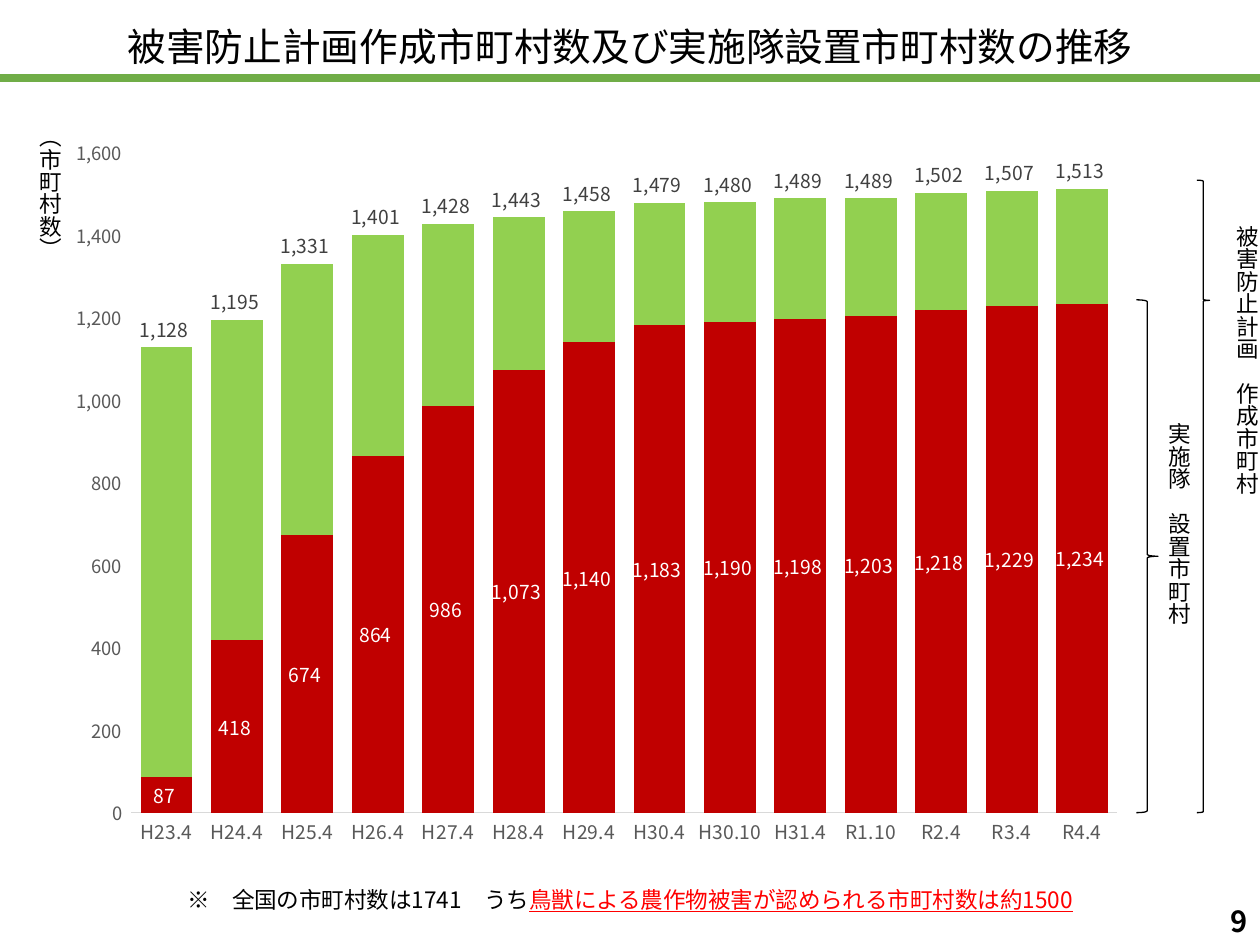
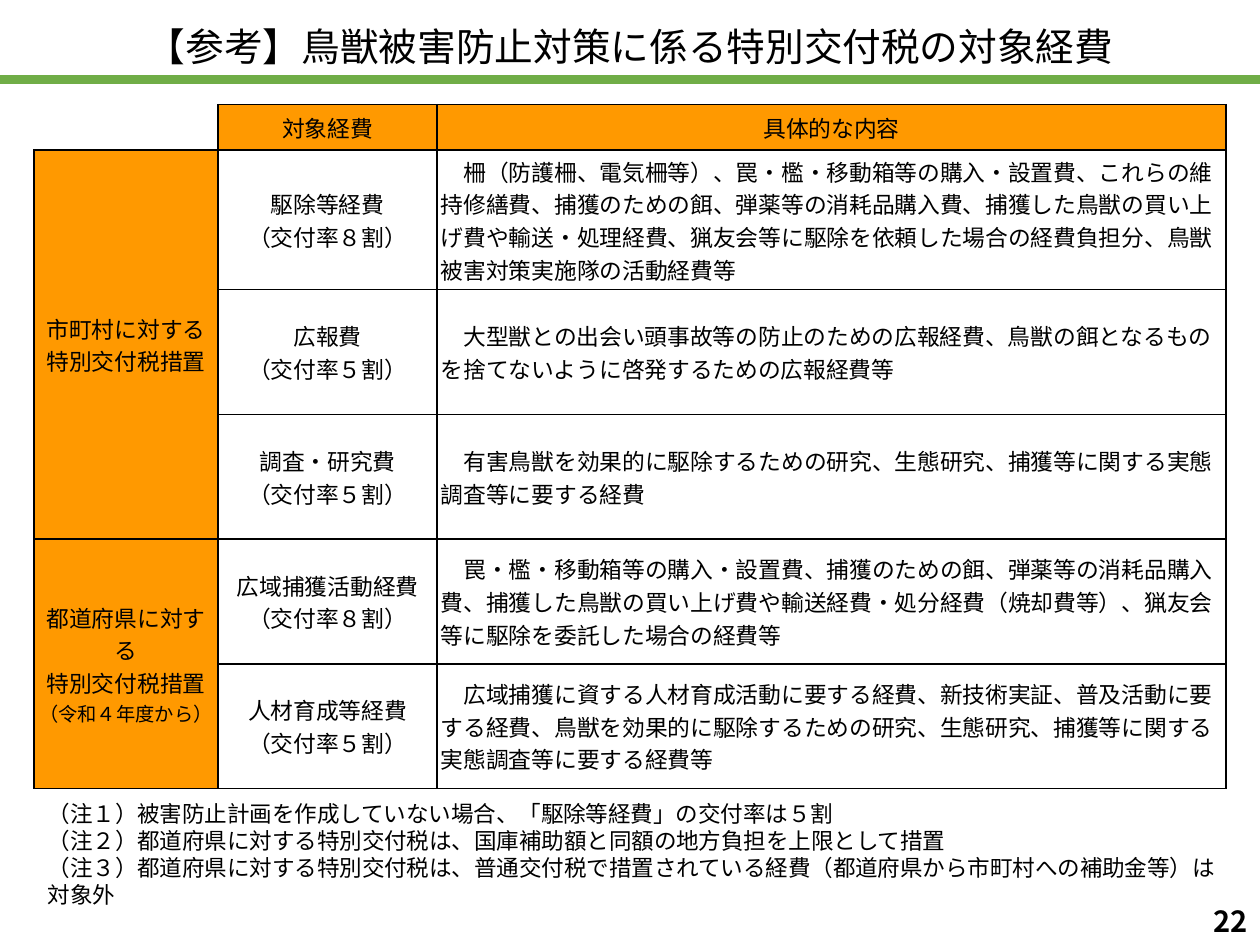
import pptx
import pptx.util
import pptx.dml.color
import pptx.enum.text
import pptx.enum.shapes
import pptx.enum.chart
import pptx.chart.data
import pptx.oxml
import pptx.oxml.ns
from lxml import etree

Inches = pptx.util.Inches
Pt = pptx.util.Pt
RGB = pptx.dml.color.RGBColor.from_string
Align = pptx.enum.text.PP_ALIGN
Anchor = pptx.enum.text.MSO_ANCHOR
Shape = pptx.enum.shapes
Chart = pptx.enum.chart
qn = pptx.oxml.ns.qn


class Theme:
    font = "Noto Sans CJK JP"
    black, white, red = "000000", "FFFFFF", "FF0000"
    band, orange = "70AD47", "FF9900"
    lime, crimson = "92D050", "C00000"
    tick, label, rule = "595959", "404040", "D9D9D9"
    title, page, note, cell, small = 22.1, 16.6, 12.9, 13, 11
    axis, mark = 10.5, 11


def write(frame, text, size, align=None, bold=None):
    frame.text = text
    for para in frame.paragraphs:
        para.alignment = align
        for run in para.runs:
            run.font.size = Pt(size)
            run.font.bold = bold
            run.font.name = Theme.font
            run.font.color.rgb = RGB(Theme.black)
            east = etree.SubElement(run.font._element, qn("a:ea"))
            east.set("typeface", Theme.font)


def place(slide, box, text, size, align=None, bold=None):
    frame = slide.shapes.add_textbox(*map(Inches, box)).text_frame
    frame.word_wrap = True
    write(frame, text, size, align, bold)
    return frame


deck = pptx.Presentation()
deck.slide_width, deck.slide_height = Inches(10), Inches(7.5)

heads = [
    ("被害防止計画作成市町村数及び実施隊設置市町村数の推移", "9", 0.62),
    ("【参考】鳥獣被害防止対策に係る特別交付税の対象経費", "22", 0.63),
]
slides = []
for title, page, level in heads:
    slide = deck.slides.add_slide(deck.slide_layouts[6])
    place(slide, (0, 0.13, 10, 0.47), title, Theme.title, Align.CENTER)
    band = slide.shapes.add_connector(
        Shape.MSO_CONNECTOR.STRAIGHT, 0, Inches(level), Inches(10), Inches(level))
    band.line.color.rgb = RGB(Theme.band)
    band.line.width = Pt(5)
    etree.SubElement(band._element.spPr, qn("a:effectLst"))
    frame = place(slide, (9.41, 7.11, 0.59, 0.39), page, Theme.page, Align.RIGHT, True)
    frame.word_wrap = False
    frame.vertical_anchor = Anchor.MIDDLE
    slides.append(slide)

trend, costs = slides

data = pptx.chart.data.CategoryChartData()
data.categories = ["H23.4", "H24.4", "H25.4", "H26.4", "H27.4", "H28.4", "H29.4",
                   "H30.4", "H30.10", "H31.4", "R1.10", "R2.4", "R3.4", "R4.4"]
data.add_series("被害防止計画作成市町村", [
    1128, 1195, 1331, 1401, 1428, 1443, 1458, 1479, 1480, 1489, 1489, 1502, 1507, 1513])
data.add_series("実施隊設置市町村", [
    87, 418, 674, 864, 986, 1073, 1140, 1183, 1190, 1198, 1203, 1218, 1229, 1234])
chart = trend.shapes.add_chart(
    Chart.XL_CHART_TYPE.COLUMN_CLUSTERED,
    Inches(0.44), Inches(0.98), Inches(8.6), Inches(5.82), data).chart
chart.has_legend = False
chart.has_title = False
chart.font.name = Theme.font
chart.font.size = Pt(Theme.axis)

plot = chart.plots[0]
plot.gap_width, plot.overlap = 36, 100
plot.vary_by_categories = False
area = chart._chartSpace.chart.plotArea
for old in area.findall(qn("c:layout")):
    area.remove(old)
layout = etree.Element(qn("c:layout"))
area.insert(0, layout)
manual = etree.SubElement(layout, qn("c:manualLayout"))
for tag, val in [("layoutTarget", "inner"), ("xMode", "edge"), ("yMode", "edge"),
                 ("x", "0.07"), ("y", "0.04"), ("w", "0.91"), ("h", "0.9")]:
    etree.SubElement(manual, qn("c:" + tag)).set("val", val)

digits = "#,##0_ ;[Red]\\-#,##0\\ "
spot = Chart.XL_LABEL_POSITION
looks = [(Theme.lime, Theme.label, spot.OUTSIDE_END),
         (Theme.crimson, Theme.white, spot.CENTER)]
for series, (fill, ink, where) in zip(plot.series, looks):
    series.format.fill.solid()
    series.format.fill.fore_color.rgb = RGB(fill)
    series.invert_if_negative = False
    marks = series.data_labels
    marks.show_value = True
    marks.position = where
    marks.number_format, marks.number_format_is_linked = digits, False
    marks.font.size = Pt(Theme.mark)
    marks.font.name = Theme.font
    marks.font.color.rgb = RGB(ink)

years, count = chart.category_axis, chart.value_axis
for axis, size in [(years, Theme.mark), (count, Theme.axis)]:
    axis.has_major_gridlines = False
    axis.major_tick_mark = axis.minor_tick_mark = Chart.XL_TICK_MARK.NONE
    axis.tick_labels.font.size = Pt(size)
    axis.tick_labels.font.name = Theme.font
    axis.tick_labels.font.color.rgb = RGB(Theme.tick)
years.format.line.color.rgb = RGB(Theme.rule)
years.format.line.width = Pt(0.75)
count.format.line.fill.background()
count.minimum_scale, count.maximum_scale, count.major_unit = 0, 1600, 200
count.tick_labels.number_format = digits
count.tick_labels.number_format_is_linked = False

for left, top, high, text in [
    (0.13, 0.9, 1.37, "（市町村数）"),
    (9.63, 1.69, 3.05, "被害防止計画　作成市町村"),
    (9.09, 3.26, 3.05, "実施隊　設置市町村"),
]:
    frame = place(trend, (left, top, 0.42, high), text, Theme.note)
    frame._txBody.bodyPr.set("vert", "eaVert")

for box, bend, tip in [((9.5, 1.43, 0.1, 5.02), 0.08, 0.19),
                       ((9.02, 2.38, 0.17, 4.07), 0.08, 0.5)]:
    brace = trend.shapes.add_shape(Shape.MSO_SHAPE.RIGHT_BRACE, *map(Inches, box))
    brace.adjustments[0], brace.adjustments[1] = bend, tip
    brace.fill.background()
    brace.line.color.rgb = RGB(Theme.black)
    brace.line.width = Pt(0.75)
    brace.shadow.inherit = False

frame = place(trend, (0, 6.98, 10, 0.32), "※　全国の市町村数は1741　うち", Theme.note, Align.CENTER)
stress = frame.paragraphs[0].add_run()
stress.text = "鳥獣による農作物被害が認められる市町村数は約1500"
stress.font.size = Pt(Theme.note)
stress.font.name = Theme.font
stress.font.underline = True
stress.font.color.rgb = RGB(Theme.red)
etree.SubElement(stress.font._element, qn("a:ea")).set("typeface", Theme.font)

rows = [
    ("", "対象経費", "具体的な内容"),
    ("市町村に対する\n特別交付税措置", "駆除等経費\n（交付率８割）",
     "　柵（防護柵、電気柵等）、罠・檻・移動箱等の購入・設置費、これらの維持修繕費、捕獲のための餌、"
     "弾薬等の消耗品購入費、捕獲した鳥獣の買い上げ費や輸送・処理経費、猟友会等に駆除を依頼した場合の"
     "経費負担分、鳥獣被害対策実施隊の活動経費等"),
    ("", "広報費\n（交付率５割）",
     "　大型獣との出会い頭事故等の防止のための広報経費、鳥獣の餌となるものを捨てないように"
     "啓発するための広報経費等"),
    ("", "調査・研究費\n（交付率５割）",
     "　有害鳥獣を効果的に駆除するための研究、生態研究、捕獲等に関する実態調査等に要する経費"),
    ("都道府県に対する\n特別交付税措置\n（令和４年度から）", "広域捕獲活動経費\n（交付率８割）",
     "　罠・檻・移動箱等の購入・設置費、捕獲のための餌、弾薬等の消耗品購入費、捕獲した鳥獣の"
     "買い上げ費や輸送経費・処分経費（焼却費等）、猟友会等に駆除を委託した場合の経費等"),
    ("", "人材育成等経費\n（交付率５割）",
     "　広域捕獲に資する人材育成活動に要する経費、新技術実証、普及活動に要する経費、鳥獣を効果的に"
     "駆除するための研究、生態研究、捕獲等に関する実態調査等に要する経費等"),
]
highs = [0.36, 1.11] + [0.99] * 4
table = costs.shapes.add_table(
    len(rows), 3, Inches(0.27), Inches(0.83), Inches(9.46), Inches(sum(highs))).table
table.first_row = table.horz_banding = False
for col, wide in zip(table.columns, (1.46, 1.74, 6.26)):
    col.width = Inches(wide)
for r, row in enumerate(rows):
    table.rows[r].height = Inches(highs[r])
    for c, text in enumerate(row):
        cell = table.cell(r, c)
        corner = r == c == 0
        cell.margin_left = cell.margin_right = Inches(0.03)
        cell.margin_top = cell.margin_bottom = Inches(0 if corner else 0.04)
        cell.vertical_anchor = Anchor.MIDDLE
        if text:
            write(cell.text_frame, text, Theme.cell,
                  Align.LEFT if r and c == 2 else Align.CENTER)
        if (r == 0 or c == 0) and not corner:
            cell.fill.solid()
            cell.fill.fore_color.rgb = RGB(Theme.orange)
        else:
            cell.fill.background()
        props = cell._tc.get_or_add_tcPr()
        for n, side in enumerate("RB" if corner else "LRTB"):
            edge = etree.Element(qn("a:ln" + side), w=str(Pt(1)))
            paint = etree.SubElement(edge, qn("a:solidFill"))
            etree.SubElement(paint, qn("a:srgbClr")).set("val", Theme.black)
            props.insert(n, edge)
table.cell(4, 0).text_frame.paragraphs[2].runs[0].font.size = Pt(Theme.small)
for first, last in [(1, 3), (4, 5)]:
    table.cell(first, 0).merge(table.cell(last, 0))

notes = [
    "（注１）被害防止計画を作成していない場合、「駆除等経費」の交付率は５割",
    "（注２）都道府県に対する特別交付税は、国庫補助額と同額の地方負担を上限として措置",
    "（注３）都道府県に対する特別交付税は、普通交付税で措置されている経費"
    "（都道府県から市町村への補助金等）は対象外",
]
place(costs, (0.28, 6.3, 9.59, 0.75), "\n".join(notes), Theme.note)

deck.save("out.pptx")
